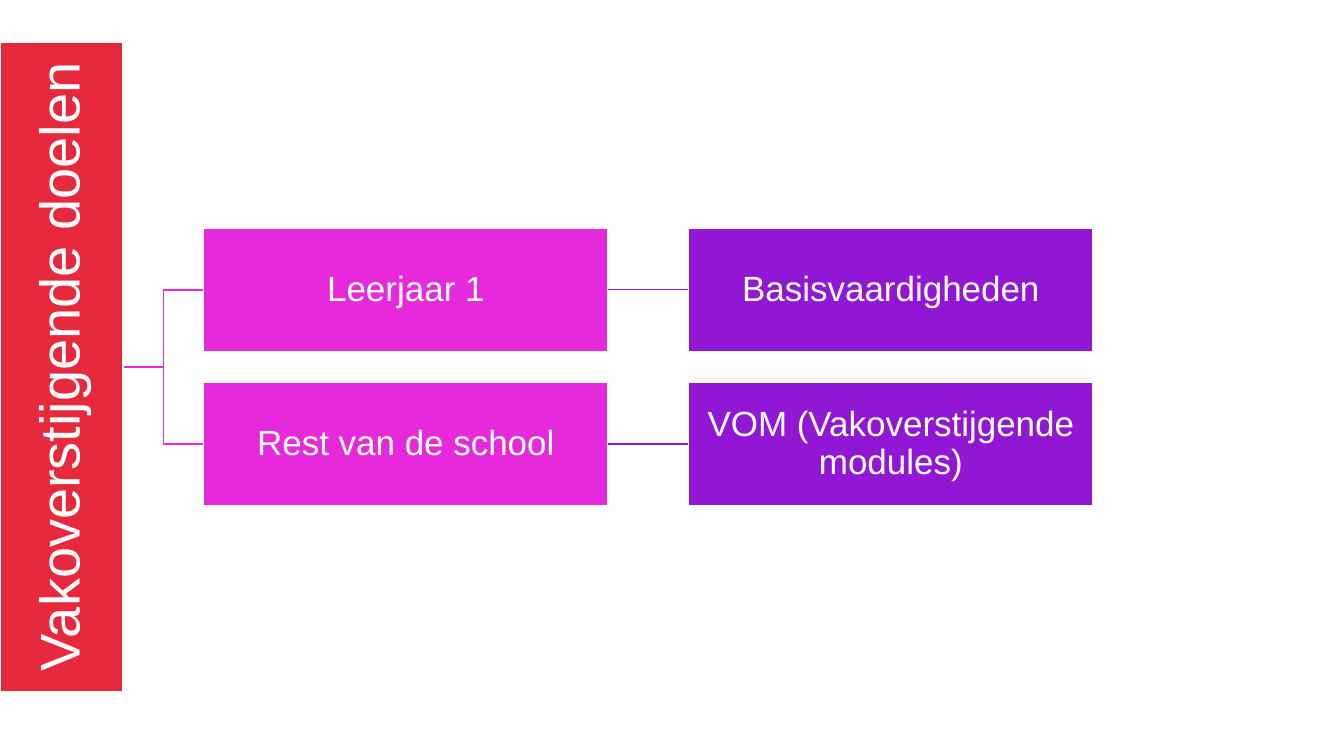
import pptx
import pptx.util
import pptx.dml.color
import pptx.enum.shapes
import pptx.enum.text
import pptx.oxml.ns
from lxml import etree

ROOT = "Vakoverstijgende doelen"
BRANCHES = [
    ("Leerjaar 1", "Basisvaardigheden"),
    ("Rest van de school", "VOM (Vakoverstijgende modules)"),
]
THEME = {
    "font": "Arial", "text": "FFFFFF", "edge": "FFFFFF",
    "root": "E7293E", "levels": ("E729DC", "9117D5"),
    "root_size": 40, "box_size": 25, "line": 1,
}

# Layout in inches
SLIDE_W, SLIDE_H = 13.33, 7.5
BOX_W, BOX_H = 4.01, 1.22
ROOT_LENGTH = 6.44
GAP_X, GAP_Y = 0.8, 0.31
CENTER_Y = 3.64

Inches, Pt = pptx.util.Inches, pptx.util.Pt
CONNECTOR = pptx.enum.shapes.MSO_CONNECTOR


def rgb(value):
    return pptx.dml.color.RGBColor.from_string(value)


def write(sp, text, size, inset):
    tf = sp.text_frame
    tf.word_wrap = True
    tf.vertical_anchor = pptx.enum.text.MSO_ANCHOR.MIDDLE
    tf.margin_left = tf.margin_right = Inches(inset)
    tf.margin_top = tf.margin_bottom = Inches(inset)
    p = tf.paragraphs[0]
    p.alignment = pptx.enum.text.PP_ALIGN.CENTER
    p.line_spacing = 0.9
    r = p.add_run()
    r.text = text
    r.font.name = THEME["font"]
    r.font.size = Pt(size)
    r.font.color.rgb = rgb(THEME["text"])


def add_box(s, text, cx, cy, width, fill, size, inset=0.02, rotation=0):
    """Add a box of the common height centred on (cx, cy)."""
    sp = s.shapes.add_shape(
        pptx.enum.shapes.MSO_SHAPE.RECTANGLE,
        Inches(cx - width / 2), Inches(cy - BOX_H / 2), Inches(width), Inches(BOX_H))
    sp.rotation = rotation
    sp.shadow.inherit = False
    sp.fill.solid()
    sp.fill.fore_color.rgb = rgb(fill)
    sp.line.color.rgb = rgb(THEME["edge"])
    sp.line.width = Pt(THEME["line"])
    write(sp, text, size, inset)


def add_link(s, kind, x, y1, y2, color):
    """Cross one column gap, starting at x, from height y1 to y2."""
    link = s.shapes.add_connector(
        kind, Inches(x), Inches(y1), Inches(x + GAP_X), Inches(y2))
    link.line.color.rgb = rgb(color)
    link.line.width = Pt(THEME["line"])
    etree.SubElement(link._element.spPr, pptx.oxml.ns.qn("a:effectLst"))


def main():
    prs = pptx.Presentation()
    prs.slide_width, prs.slide_height = Inches(SLIDE_W), Inches(SLIDE_H)
    s = prs.slides.add_slide(prs.slide_layouts[6])

    for row, branch in enumerate(BRANCHES):
        cy = CENTER_Y + (row - (len(BRANCHES) - 1) / 2) * (BOX_H + GAP_Y)
        for level, (text, color) in enumerate(zip(branch, THEME["levels"])):
            gap_x = BOX_H + level * (BOX_W + GAP_X)
            if level == 0:
                add_link(s, CONNECTOR.ELBOW, gap_x, CENTER_Y, cy, color)
            else:
                add_link(s, CONNECTOR.STRAIGHT, gap_x, cy, cy, color)
            add_box(s, text, gap_x + GAP_X + BOX_W / 2, cy, BOX_W, color,
                    THEME["box_size"])

    add_box(s, ROOT, BOX_H / 2, CENTER_Y, ROOT_LENGTH, THEME["root"],
            THEME["root_size"], inset=0.03, rotation=270)
    prs.save("out.pptx")


if __name__ == "__main__":
    main()
